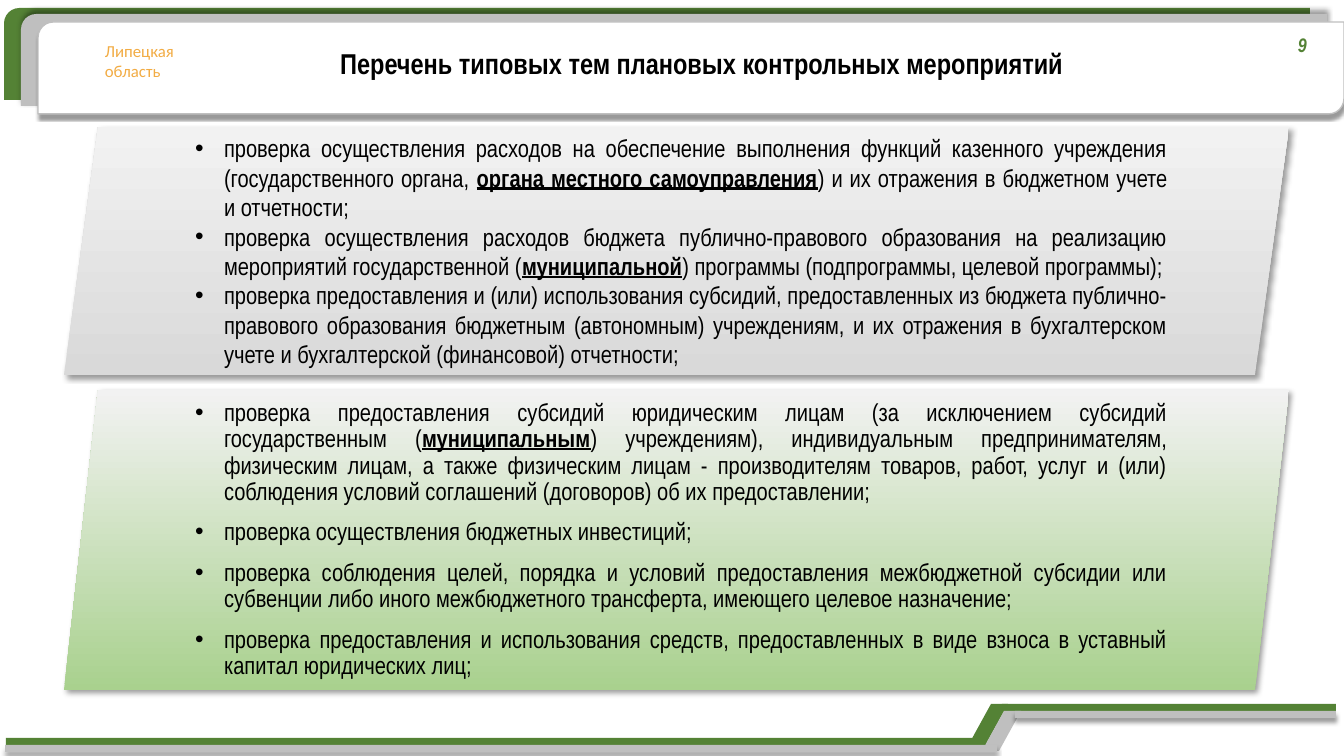
import lxml.etree
import pptx
import pptx.util
import pptx.dml.color
import pptx.enum.shapes
import pptx.enum.text
import pptx.oxml.ns

PX = 914400 / 100.8
COLORS = {
    "green": "548235", "grey": "BFBFBF", "white": "FFFFFF", "black": "000000",
    "orange": "F2AC44", "panel_top": "F2F2F2", "panel_grey": "D9D9D9",
    "panel_green": "A9D18E",
}
NARROW = "Arial Narrow"
SHAPES = pptx.enum.shapes.MSO_SHAPE
ALIGN = pptx.enum.text.PP_ALIGN
qn = pptx.oxml.ns.qn

TITLE = "Перечень типовых тем плановых контрольных мероприятий"
GENERAL_CHECKS = [
    "проверка осуществления расходов на обеспечение выполнения функций казенного учреждения (государственного органа, *органа местного самоуправления*) и их отражения в бюджетном учете и отчетности;",
    "проверка осуществления расходов бюджета публично-правового образования на реализацию мероприятий государственной (*муниципальной*) программы (подпрограммы, целевой программы);",
    "проверка предоставления и (или) использования субсидий, предоставленных из бюджета публично-правового образования бюджетным (автономным) учреждениям, и их отражения в бухгалтерском учете и бухгалтерской (финансовой) отчетности;",
]
SUBSIDY_CHECKS = [
    "проверка предоставления субсидий юридическим лицам (за исключением субсидий государственным (*муниципальным*) учреждениям), индивидуальным предпринимателям, физическим лицам, а также физическим лицам - производителям товаров, работ, услуг и (или) соблюдения условий соглашений (договоров) об их предоставлении;",
    "проверка осуществления бюджетных инвестиций;",
    "проверка соблюдения целей, порядка и условий предоставления межбюджетной субсидии или субвенции либо иного межбюджетного трансферта, имеющего целевое назначение;",
    "проверка предоставления и использования средств, предоставленных в виде взноса в уставный капитал юридических лиц;",
]


def px(n):
    return pptx.util.Emu(round(n * PX))


def rgb(name):
    return pptx.dml.color.RGBColor.from_string(COLORS[name])


def place(sp, x, y, w, h):
    sp.left, sp.top, sp.width, sp.height = px(x), px(y), px(w), px(h)


def style_font(font, size, color, name=NARROW, bold=False, italic=False):
    font.name, font.size = name, pptx.util.Pt(size)
    font.bold, font.italic = bold, italic
    font.color.rgb = rgb(color)


def add_shadow(sp, blur, dist, angle):
    effects = sp._element.spPr.find(qn("a:effectLst"))
    shadow = lxml.etree.SubElement(
        effects, qn("a:outerShdw"), blurRad=str(blur * 12700),
        dist=str(dist * 12700), dir=str(angle * 60000), algn="ctr", rotWithShape="0")
    color = lxml.etree.SubElement(shadow, qn("a:srgbClr"), val=COLORS["black"])
    lxml.etree.SubElement(color, qn("a:alpha"), val="40000")


def paint(sp, color):
    sp.shadow.inherit = False
    sp.fill.solid()
    sp.fill.fore_color.rgb = rgb(color)
    sp.line.fill.background()


def add_block(s, kind, box, color):
    x, y, w, h = box
    sp = s.shapes.add_shape(kind, px(x), px(y), px(w), px(h))
    paint(sp, color)
    return sp


def add_label(s, box, text, size, color, **font):
    x, y, w, h = box
    tf = s.shapes.add_textbox(px(x), px(y), px(w), px(h)).text_frame
    tf.word_wrap = True
    tf.text = text
    for p in tf.paragraphs:
        style_font(p.runs[0].font, size, color, **font)


def add_header(s, x, y, w, h):
    plates = [("green", 0, 0, None), ("grey", 17, 6, (4, 3, 270)),
              ("white", 34, 14, (2, 3, 90))]
    for color, dx, dy, shadow in plates:
        sp = add_block(s, SHAPES.ROUND_2_DIAG_RECTANGLE, (x + dx, y + dy, w, h), color)
        if color == "white":
            sp.line.color.rgb = rgb("grey")
            sp.line.width = pptx.util.Pt(1)
        if shadow:
            add_shadow(sp, *shadow)
    add_label(s, (x + 91, y + 28, 92, 50), "Липецкая\nобласть", 12, "orange", name="Calibri")

    title = s.shapes.title
    place(title, x + 206, y + 33, 984, 45)
    tf = title.text_frame
    tf.text = TITLE
    tf.auto_size = pptx.enum.text.MSO_AUTO_SIZE.NONE
    tf.vertical_anchor = pptx.enum.text.MSO_ANCHOR.MIDDLE
    tf.paragraphs[0].alignment = ALIGN.CENTER
    style_font(tf.paragraphs[0].runs[0].font, 20.5, "black", bold=True)
    title.element.getparent().append(title.element)
    add_label(s, (x + 1284, y + 20, 40, 34), "9", 14, "green", bold=True, italic=True)


def add_ribbon(s, x, y, color, low, high, shadow):
    step = s.shapes.build_freeform(x, y + 40, scale=PX)
    step.add_line_segments([(x + 22, y), (x + 39, y), (x + 17, y + 40)], close=True)
    paint(step.convert_to_shape(), color)
    for left, right, top in [(*low, y + 34), (*high, y)]:
        bar = add_block(s, SHAPES.RECTANGLE, (left, top, right - left, 7), color)
        if shadow:
            add_shadow(bar, 3, 3, 90)


def add_footer(s, x, y):
    add_ribbon(s, x + 963, y, "green", (x, x + 980), (x + 996, x + 1330), False)
    add_ribbon(s, x + 976, y + 7, "grey", (x - 1, x + 991), (x + 1009, x + 1330), True)


def add_bullet(p):
    pPr = p._p.get_or_add_pPr()
    pPr.set("marL", str(px(39)))
    pPr.set("indent", str(-px(29)))
    lxml.etree.SubElement(pPr, qn("a:buFont"), typeface="Arial")
    lxml.etree.SubElement(pPr, qn("a:buChar"), char="•")


def add_panel(s, body, box, base, slant, items, spacing, gap):
    x, y, w, h = box
    sp = add_block(s, SHAPES.PARALLELOGRAM, box, base)
    sp.adjustments[0] = slant
    sp.fill.gradient()
    sp.fill.gradient_angle = 90
    for stop, color in zip(sp.fill.gradient_stops, (base, "panel_top")):
        stop.color.rgb = rgb(color)
    add_shadow(sp, 4, 3, 45)

    place(body, x + 117, y, w - 234, h)
    body.element.getparent().append(body.element)
    tf = body.text_frame
    tf.auto_size = pptx.enum.text.MSO_AUTO_SIZE.NONE
    tf.word_wrap = True
    tf.vertical_anchor = pptx.enum.text.MSO_ANCHOR.MIDDLE
    tf.margin_left = tf.margin_right = tf.margin_top = tf.margin_bottom = px(4)
    for i, item in enumerate(items):
        p = tf.add_paragraph() if i else tf.paragraphs[0]
        add_bullet(p)
        p.alignment = ALIGN.JUSTIFY
        p.line_spacing = spacing
        p.space_before = pptx.util.Pt(gap if i else 0)
        for part, text in enumerate(item.split("*")):
            r = p.add_run()
            r.text = text
            emphasis = part % 2 == 1
            style_font(r.font, 17.5, "black", bold=emphasis)
            r.font.underline = emphasis


def main():
    prs = pptx.Presentation()
    prs.slide_width, prs.slide_height = px(1344), px(756)
    s = prs.slides.add_slide(prs.slide_layouts[3])
    add_header(s, 4, 8, 1306, 92)
    add_footer(s, 6, 704)
    add_panel(s, s.placeholders[1], (64, 127, 1225, 248), "panel_grey", 0.137,
              GENERAL_CHECKS, 1.0, 0)
    add_panel(s, s.placeholders[2], (64, 390, 1225, 300), "panel_green", 0.113,
              SUBSIDY_CHECKS, 0.9, 10)
    prs.save("out.pptx")


if __name__ == "__main__":
    main()
